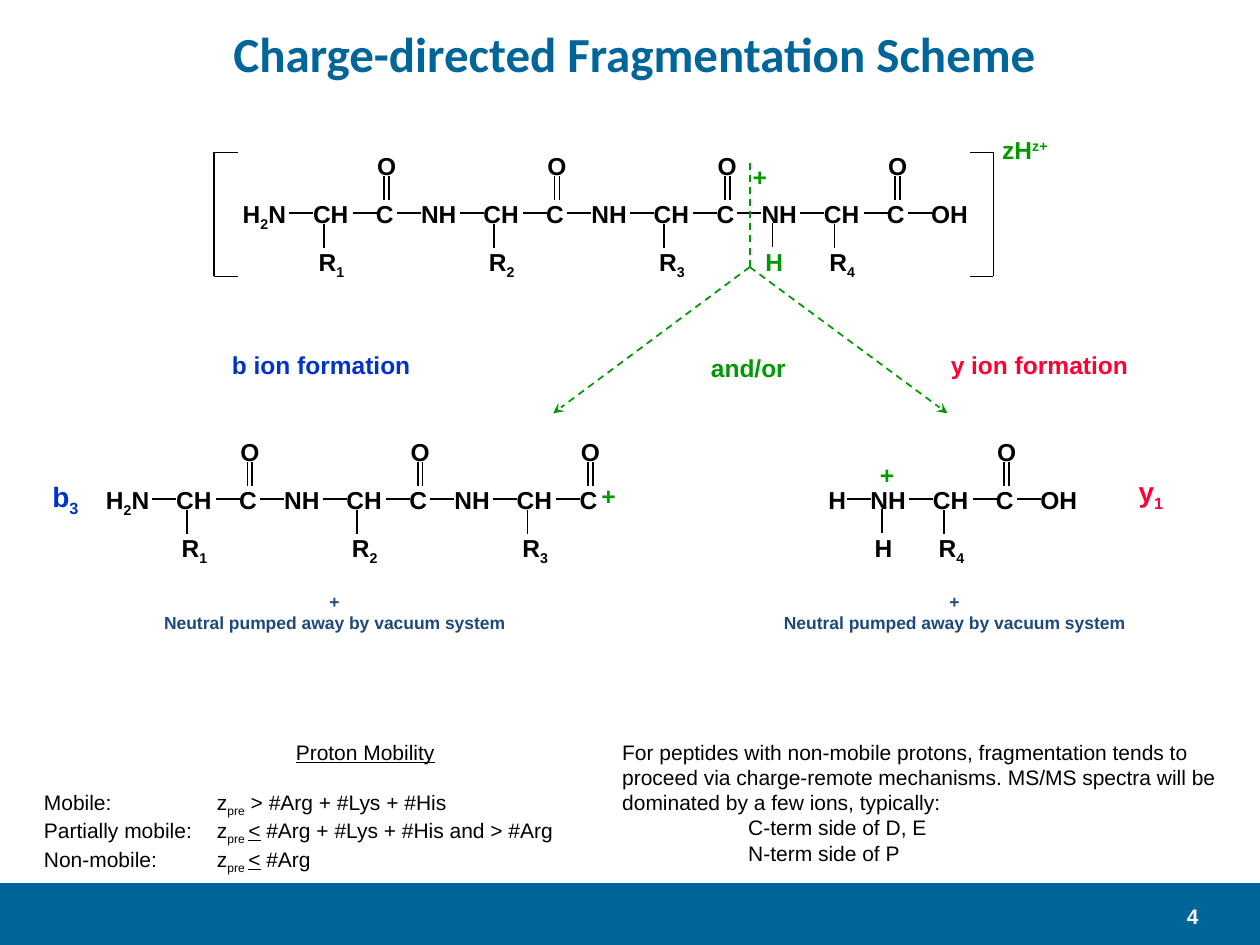
from typing import NamedTuple

from pptx import Presentation
from pptx.dml.color import RGBColor
from pptx.enum.dml import MSO_LINE
from pptx.enum.shapes import MSO_CONNECTOR, MSO_SHAPE
from pptx.enum.text import MSO_ANCHOR, PP_ALIGN
from pptx.oxml.ns import qn
from pptx.util import Pt
from lxml import etree

STRAIGHT = MSO_CONNECTOR.STRAIGHT
RECTANGLE = MSO_SHAPE.RECTANGLE
DASH = MSO_LINE.DASH
MIDDLE = MSO_ANCHOR.MIDDLE
LEFT, CENTER, RIGHT = PP_ALIGN.LEFT, PP_ALIGN.CENTER, PP_ALIGN.RIGHT

TEAL = RGBColor(0x00, 0x66, 0x99)
PALE = RGBColor(0xF8, 0xF8, 0xF8)
BLACK = RGBColor(0x00, 0x00, 0x00)
GREEN = RGBColor(0x00, 0x99, 0x00)
BLUE = RGBColor(0x00, 0x33, 0xCC)
RED = RGBColor(0xFF, 0x00, 0x33)
NAVY = RGBColor(0x1F, 0x49, 0x7D)

SUBSCRIPT, SUPERSCRIPT = -25, 30
INSET = 7.2
LABEL_HEIGHT = 24.5
RESIDUE_PITCH = 97.3
CARBONYL_OFFSET = 30.9
AMIDE_OFFSET = 61.7
BOND_LENGTH = 13.7

PEPTIDE_X, PEPTIDE_Y = 189.1, 121.7
FRAGMENT_Y = 285.1
B_ION_X, Y_ION_X = 110.9, 543.4


class Piece(NamedTuple):
    text: str
    baseline: int = 0
    underline: bool = False


def add_pieces(paragraph, pieces, size, color, bold=False, font_name="Arial"):
    for piece in pieces:
        run = paragraph.add_run()
        run.text = piece.text
        font = run.font
        font.name, font.size, font.bold = font_name, Pt(size), bold
        font.color.rgb = color
        if piece.underline:
            font.underline = True
        if piece.baseline:
            run._r.get_or_add_rPr().set("baseline", str(piece.baseline * 1000))


def add_text_box(slide, left, top, width, height, wrap=True):
    box = slide.shapes.add_textbox(Pt(left), Pt(top), Pt(width), Pt(height))
    box.text_frame.word_wrap = wrap
    return box.text_frame


def next_paragraph(frame):
    """Return the first paragraph while it is empty, and a new one after that."""
    first = frame.paragraphs[0]
    return frame.add_paragraph() if first.runs else first


def add_label(slide, center, top, *pieces, color=BLACK, size=14, width=30):
    frame = add_text_box(slide, center - width / 2, top, width, LABEL_HEIGHT, wrap=False)
    paragraph = frame.paragraphs[0]
    paragraph.alignment = CENTER
    add_pieces(paragraph, pieces, size, color, bold=True)


def add_line(slide, x1, y1, x2, y2, color=BLACK, dashed=False, arrow=False):
    connector = slide.shapes.add_connector(STRAIGHT, Pt(x1), Pt(y1), Pt(x2), Pt(y2))
    connector.line.color.rgb = color
    connector.line.width = Pt(1)
    if dashed:
        connector.line.dash_style = DASH
    properties = connector._element.spPr
    if arrow:
        etree.SubElement(properties.find(qn("a:ln")), qn("a:tailEnd"), type="stealth")
    etree.SubElement(properties, qn("a:effectLst"))


def add_bond(slide, left, y):
    add_line(slide, left, y, left + BOND_LENGTH, y)


def add_tab_stops(paragraph, positions, alignment):
    tab_list = etree.SubElement(paragraph._p.get_or_add_pPr(), qn("a:tabLst"))
    for position in positions:
        etree.SubElement(tab_list, qn("a:tab"), pos=str(Pt(position)), algn=alignment)


def add_backbone(slide, left, y, first_pieces, atoms, centers):
    """Write a chain of atoms, each centred on its own tab stop."""
    width = centers[-1] - left + 30
    frame = add_text_box(slide, left - INSET, y - 11.5, width, LABEL_HEIGHT)
    paragraph = frame.paragraphs[0]
    add_tab_stops(paragraph, [center - left for center in centers], "ctr")
    chain = Piece("".join("\t" + atom for atom in atoms))
    add_pieces(paragraph, [*first_pieces, chain], 14, BLACK, bold=True)


def chain_centers(x, residues):
    offsets = (0, CARBONYL_OFFSET, AMIDE_OFFSET)
    return [x + i * RESIDUE_PITCH + offset for i in range(residues) for offset in offsets]


def add_residue(slide, number, x, y, joined=True):
    """Draw the bonds, side chain and oxygen of the residue whose CH is at x."""
    add_bond(slide, x - 23.8, y)
    add_bond(slide, x + 12.5, y)
    if joined:
        add_bond(slide, x + 37.7, y)
    add_line(slide, x - 4.1, y + 6.5, x - 4.1, y + 20.1)
    for offset in (30.5, 33.3):
        add_line(slide, x + offset, y - 20.9, x + offset, y - 7.2)
    add_label(slide, x + 0.3, y + 15.8, Piece("R"), Piece(str(number), SUBSCRIPT))
    add_label(slide, x + 31.9, y - 38.9, Piece("O"))


def add_amide_hydrogen(slide, x, y, color):
    add_line(slide, x - 39.5, y + 6, x - 39.5, y + 19.6)
    add_label(slide, x - 38.5, y + 15.8, Piece("H"), color=color)


def add_peptide(slide):
    amine = [Piece("H"), Piece("2", SUBSCRIPT), Piece("N")]
    atoms = ["CH", "C", "NH"] * 3 + ["CH", "C", "OH"]
    add_backbone(slide, 138.8, PEPTIDE_Y, amine, atoms, chain_centers(PEPTIDE_X, 4))
    for i in range(4):
        add_residue(slide, i + 1, PEPTIDE_X + i * RESIDUE_PITCH, PEPTIDE_Y)
    add_amide_hydrogen(slide, PEPTIDE_X + 3 * RESIDUE_PITCH, PEPTIDE_Y, GREEN)
    add_label(slide, 434.2, 89.3, Piece("+"), color=GREEN)
    top, bottom = 87.1, 158
    for side, tip in ((122.4, 136.1), (567.7, 554.4)):
        add_line(slide, side, top, side, bottom)
        add_line(slide, side, top, tip, top)
        add_line(slide, side, bottom, tip, bottom)
    add_label(slide, 585.7, 73.4, Piece("zH"), Piece("z+", SUPERSCRIPT), color=GREEN, width=42)


def add_cleavage(slide):
    add_line(slide, 428.4, 92.9, 428.4, 152.6, GREEN, dashed=True)
    for tip in (316.1, 541.4):
        add_line(slide, 428.4, 152.6, tip, 236.2, GREEN, dashed=True, arrow=True)
    add_label(slide, 183.6, 196.6, Piece("b ion formation"), color=BLUE, width=117)
    add_label(slide, 427.7, 198, Piece("and/or"), color=GREEN, width=58)
    add_label(slide, 594, 196.6, Piece("y ion formation"), color=RED, width=117)


def add_b_ion(slide):
    amine = [Piece("H"), Piece("2", SUBSCRIPT), Piece("N")]
    atoms = ["CH", "C", "NH"] * 2 + ["CH", "C"]
    add_backbone(slide, 60.6, FRAGMENT_Y, amine, atoms, chain_centers(B_ION_X, 3)[:-1])
    for i in range(3):
        add_residue(slide, i + 1, B_ION_X + i * RESIDUE_PITCH, FRAGMENT_Y, joined=i < 2)
    add_label(slide, 347.8, 271.4, Piece("+"), color=GREEN)
    add_label(slide, 37.4, 270.7, Piece("b"), Piece("3", SUBSCRIPT), color=BLUE, size=16)


def add_y_ion(slide):
    add_backbone(slide, 497.5, FRAGMENT_Y, [Piece("NH")], ["CH", "C", "OH"],
                 chain_centers(Y_ION_X, 1))
    add_residue(slide, 4, Y_ION_X, FRAGMENT_Y)
    add_amide_hydrogen(slide, Y_ION_X, FRAGMENT_Y, BLACK)
    add_bond(slide, Y_ION_X - 59.6, FRAGMENT_Y)
    add_label(slide, 478.4, 273.6, Piece("H"))
    add_label(slide, 506.9, 259.2, Piece("+"), color=GREEN)
    add_label(slide, 657.7, 267.8, Piece("y"), Piece("1", SUBSCRIPT), color=RED, size=16)


def add_neutral_note(slide, left):
    frame = add_text_box(slide, left, 334.1, 211, 31.7, wrap=False)
    for text in ("+", "Neutral pumped away by vacuum system"):
        paragraph = next_paragraph(frame)
        paragraph.alignment = CENTER
        add_pieces(paragraph, [Piece(text)], 10, NAVY, bold=True)


def add_mobility_rules(slide):
    frame = add_text_box(slide, 18, 419, 320.4, 80)
    heading = frame.paragraphs[0]
    heading.alignment = CENTER
    heading._p.get_or_add_pPr().set("marL", str(Pt(61)))
    add_pieces(heading, [Piece("Proton Mobility", underline=True)], 12, BLACK)
    at_most = [Piece("pre ", SUBSCRIPT), Piece("<", underline=True)]
    rules = (
        [Piece("Mobile:\tz"), Piece("pre", SUBSCRIPT), Piece(" > #Arg + #Lys + #His")],
        [Piece("Partially mobile:\tz"), *at_most, Piece(" #Arg + #Lys + #His and > #Arg")],
        [Piece("Non-mobile:\tz"), *at_most, Piece(" #Arg")],
    )
    for i, pieces in enumerate(rules):
        paragraph = next_paragraph(frame)
        if i == 0:
            paragraph.space_before = Pt(14)
        add_tab_stops(paragraph, [98.8], "l")
        add_pieces(paragraph, pieces, 12, BLACK)


def add_remote_note(slide):
    frame = add_text_box(slide, 348.5, 419, 362.2, 80)
    lines = (
        ("For peptides with non-mobile protons, fragmentation tends to proceed via "
         "charge-remote mechanisms. MS/MS spectra will be dominated by a few ions, typically:", 0),
        ("C-term side of D, E", 72),
        ("N-term side of P", 72),
    )
    for text, indent in lines:
        paragraph = next_paragraph(frame)
        paragraph._p.get_or_add_pPr().set("marL", str(Pt(indent)))
        add_pieces(paragraph, [Piece(text)], 12, BLACK)


def add_title(slide, text):
    title = slide.shapes.title
    title.left, title.top, title.width, title.height = Pt(12.2), Pt(12.2), Pt(700.6), Pt(36)
    title.text_frame.vertical_anchor = MIDDLE
    paragraph = title.text_frame.paragraphs[0]
    paragraph.alignment = CENTER
    add_pieces(paragraph, [Piece(text)], 28, TEAL, bold=True, font_name="Calibri")


def add_footer(slide, number):
    bar = slide.shapes.add_shape(RECTANGLE, Pt(0), Pt(504.7), Pt(720), Pt(35.3))
    bar.shadow.inherit = False
    bar.fill.solid()
    bar.fill.fore_color.rgb = TEAL
    bar.line.fill.background()
    paragraph = add_text_box(slide, 642.2, 512.6, 49.7, 18).paragraphs[0]
    paragraph.alignment = RIGHT
    add_pieces(paragraph, [Piece(number)], 12, PALE, bold=True)


def main():
    presentation = Presentation()
    presentation.slide_width, presentation.slide_height = Pt(720), Pt(540)
    slide = presentation.slides.add_slide(presentation.slide_layouts[5])
    add_footer(slide, "4")
    add_title(slide, "Charge-directed Fragmentation Scheme")
    add_peptide(slide)
    add_cleavage(slide)
    add_b_ion(slide)
    add_y_ion(slide)
    for left in (85.7, 439.9):
        add_neutral_note(slide, left)
    add_mobility_rules(slide)
    add_remote_note(slide)
    presentation.save("out.pptx")


if __name__ == "__main__":
    main()
